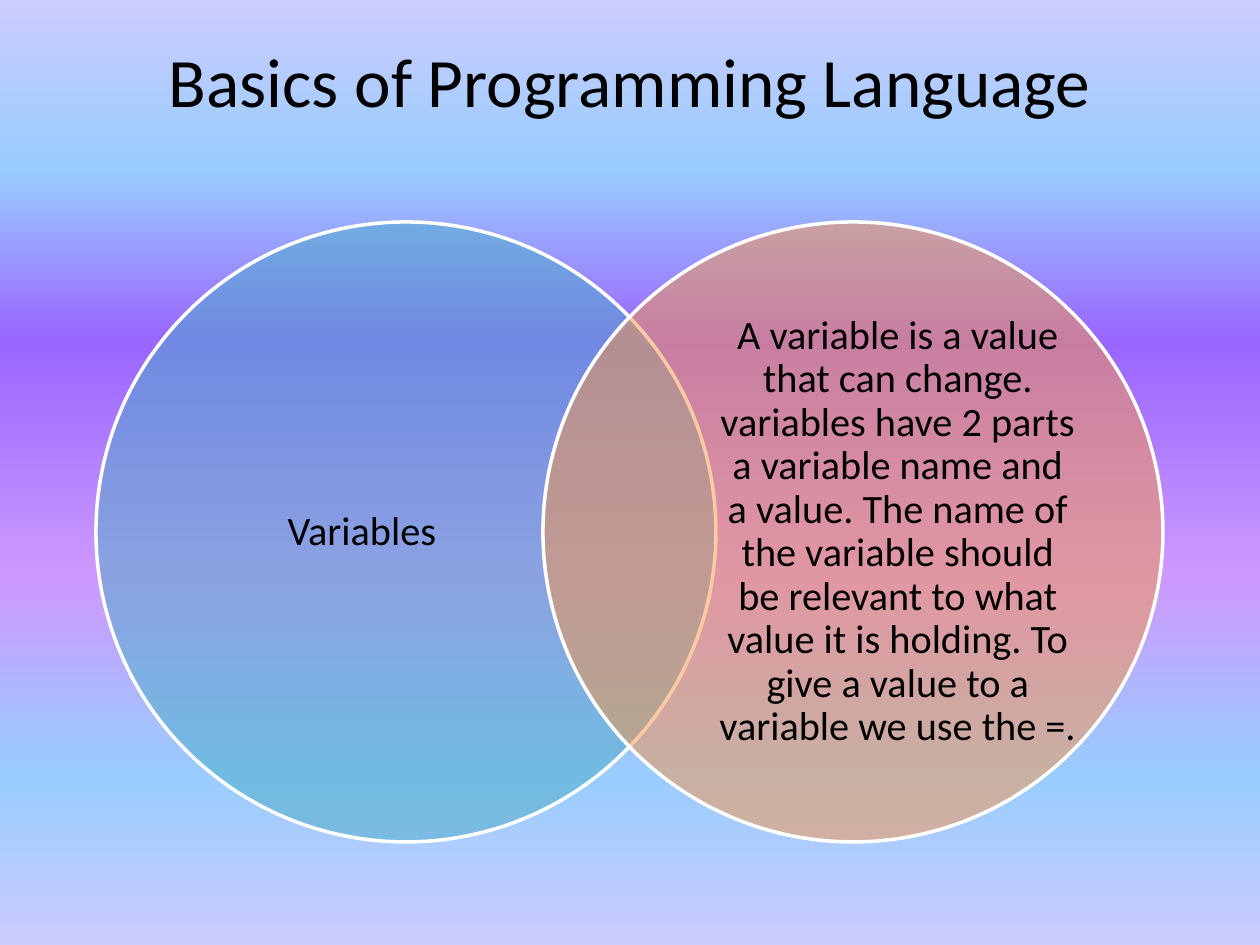
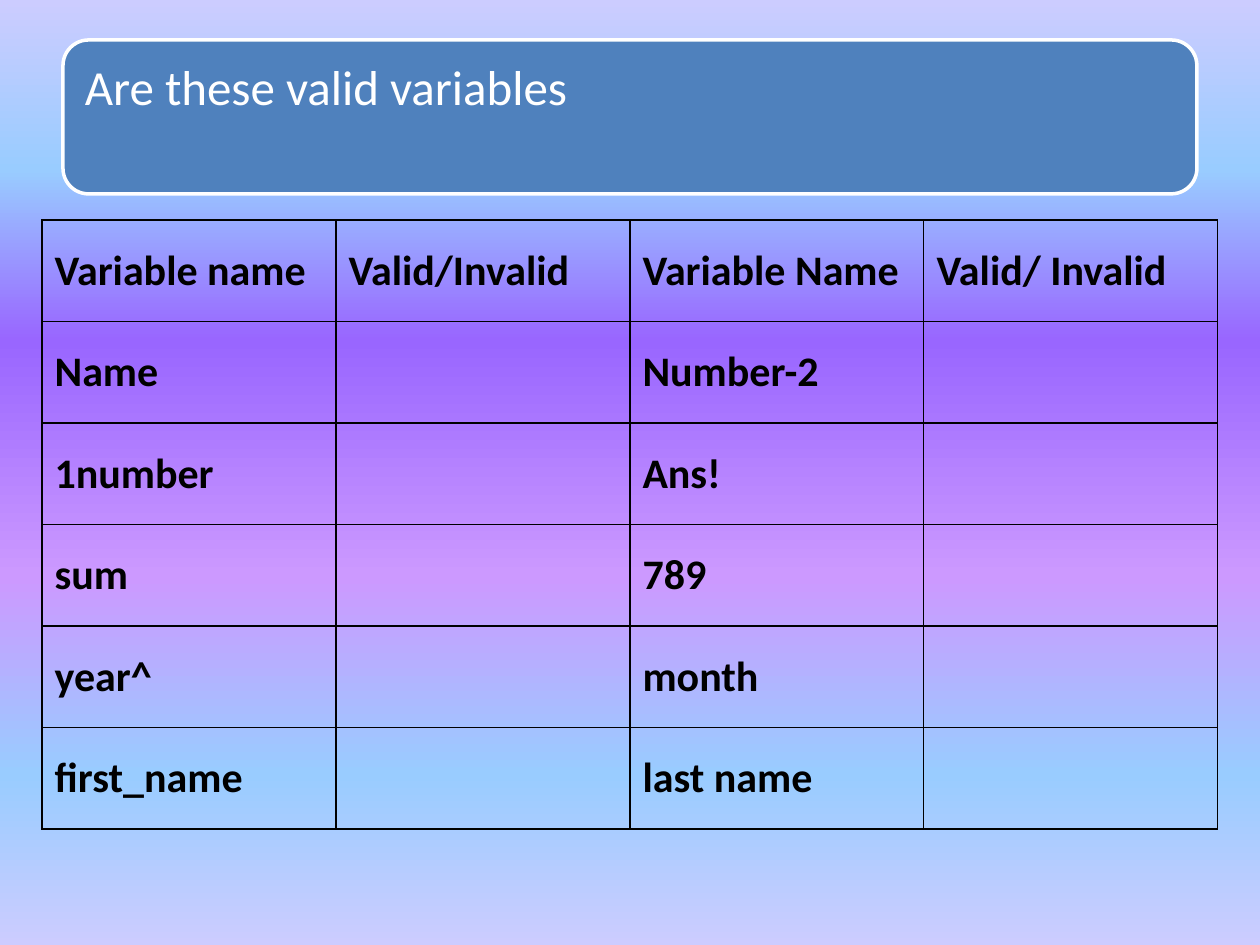
from lxml import etree
from pptx import Presentation
from pptx import util as u
from pptx.dml.color import RGBColor
from pptx.enum import shapes, text
from pptx.oxml.ns import qn

PX = u.Inches(1) / 126
FONT = "Calibri"
BLACK = RGBColor(0x00, 0x00, 0x00)
WHITE = RGBColor(0xFF, 0xFF, 0xFF)
TEAL = RGBColor(0x4B, 0xAC, 0xC6)
ORANGE = RGBColor(0xF7, 0x96, 0x46)
BLUE = RGBColor(0x4F, 0x81, 0xBD)
LAVENDER = RGBColor(0xCC, 0xCC, 0xFF)
SKY = RGBColor(0x99, 0xCC, 0xFF)
VIOLET = RGBColor(0x99, 0x66, 0xFF)
PINK = RGBColor(0xCC, 0x99, 0xFF)
BACKDROP = [(0, LAVENDER), (18, SKY), (36, VIOLET), (61, PINK), (82, SKY), (100, LAVENDER)]


def add_text(slide, words, box, size, color=BLACK, align=text.PP_ALIGN.CENTER,
             anchor=text.MSO_ANCHOR.MIDDLE, inset=0, spacing=0.9):
    """Add a wrapped text box; box is left, top, width, height in px."""
    frame = slide.shapes.add_textbox(*[round(v * PX) for v in box]).text_frame
    frame.word_wrap = True
    frame.vertical_anchor = anchor
    frame.margin_left = frame.margin_right = round(inset * PX)
    frame.margin_top = frame.margin_bottom = round(inset * PX)
    paragraph = frame.paragraphs[0]
    paragraph.alignment = align
    paragraph.line_spacing = spacing
    run = paragraph.add_run()
    run.text = words
    run.font.name, run.font.size = FONT, u.Pt(size)
    run.font.color.rgb = color


def add_panel(slide, kind, box, color, opacity=100):
    """Add a white-edged shape; box is in px and opacity in percent."""
    panel = slide.shapes.add_shape(kind, *[round(v * PX) for v in box])
    panel.shadow.inherit = False
    panel.fill.solid()
    panel.fill.fore_color.rgb = color
    panel.line.color.rgb = WHITE
    panel.line.width = u.Pt(2)
    if opacity < 100:
        tint = panel.fill._xPr.find(qn("a:solidFill"))[0]
        etree.SubElement(tint, qn("a:alpha"), val=str(opacity * 1000))


prs = Presentation()
prs.slide_width, prs.slide_height = u.Inches(10), u.Inches(7.5)
blank = prs.slide_layouts[6]

# Shared background on the master
backdrop = prs.slide_master.background.fill
backdrop.gradient()
backdrop.gradient_angle = 270
stops = prs.slide_master.element.find(".//" + qn("a:gsLst"))
for stop in list(stops):
    stops.remove(stop)
for percent, color in BACKDROP:
    stop = etree.SubElement(stops, qn("a:gs"), pos=str(percent * 1000))
    etree.SubElement(stop, qn("a:srgbClr"), val=str(color))

# Slide 1: two overlapping circles
basics = prs.slides.add_slide(blank)
add_text(basics, "Basics of Programming Language", (63, 38, 1134, 157), 39.6,
         anchor=text.MSO_ANCHOR.TOP, spacing=1.0)
DEFINITION = ("A variable is a value that can change. variables have 2 parts "
              "a variable name and a value. The name of the variable should be "
              "relevant to what value it is holding. To give a value to a "
              "variable we use the =.")
for circle_left, words_left, color, words in [(96, 183, TEAL, "Variables"),
                                              (543, 719, ORANGE, DEFINITION)]:
    add_panel(basics, shapes.MSO_SHAPE.OVAL, (circle_left, 222, 620, 620), color, opacity=50)
    add_text(basics, words, (words_left, 295, 358, 474), 23)

# Slide 2: question banner and answer table
quiz = prs.slides.add_slide(blank)
add_panel(quiz, shapes.MSO_SHAPE.ROUNDED_RECTANGLE, (63, 40, 1134, 154), BLUE)
add_text(quiz, "Are these valid variables", (70, 48, 1119, 139), 28, color=WHITE,
         align=text.PP_ALIGN.LEFT, anchor=text.MSO_ANCHOR.TOP, inset=15)

ROWS = [
    ("Variable name", "Valid/Invalid", "Variable Name", "Valid/ Invalid"),
    ("Name", "", "Number-2", ""),
    ("1number", "", "Ans!", ""),
    ("sum", "", "789", ""),
    ("year^", "", "month", ""),
    ("first_name", "", "last name", ""),
]
answers = quiz.shapes.add_table(len(ROWS), len(ROWS[0]), *[round(v * PX) for v in (42, 220, 1176, 609)]).table
answers.first_row = answers.horz_banding = False
for row, names in enumerate(ROWS):
    for column, name in enumerate(names):
        cell = answers.cell(row, column)
        cell.vertical_anchor = text.MSO_ANCHOR.MIDDLE
        cell.fill.background()
        cell.text = name
        font = cell.text_frame.paragraphs[0].font
        font.name, font.size, font.bold = FONT, u.Pt(24), True
        font.color.rgb = BLACK
        properties = cell._tc.get_or_add_tcPr()
        for place, side in enumerate(("lnL", "lnR", "lnT", "lnB")):
            border = etree.Element(qn("a:" + side), w=str(u.Pt(0.75)))
            ink = etree.SubElement(border, qn("a:solidFill"))
            etree.SubElement(ink, qn("a:srgbClr"), val=str(BLACK))
            properties.insert(place, border)

prs.save("out.pptx")
